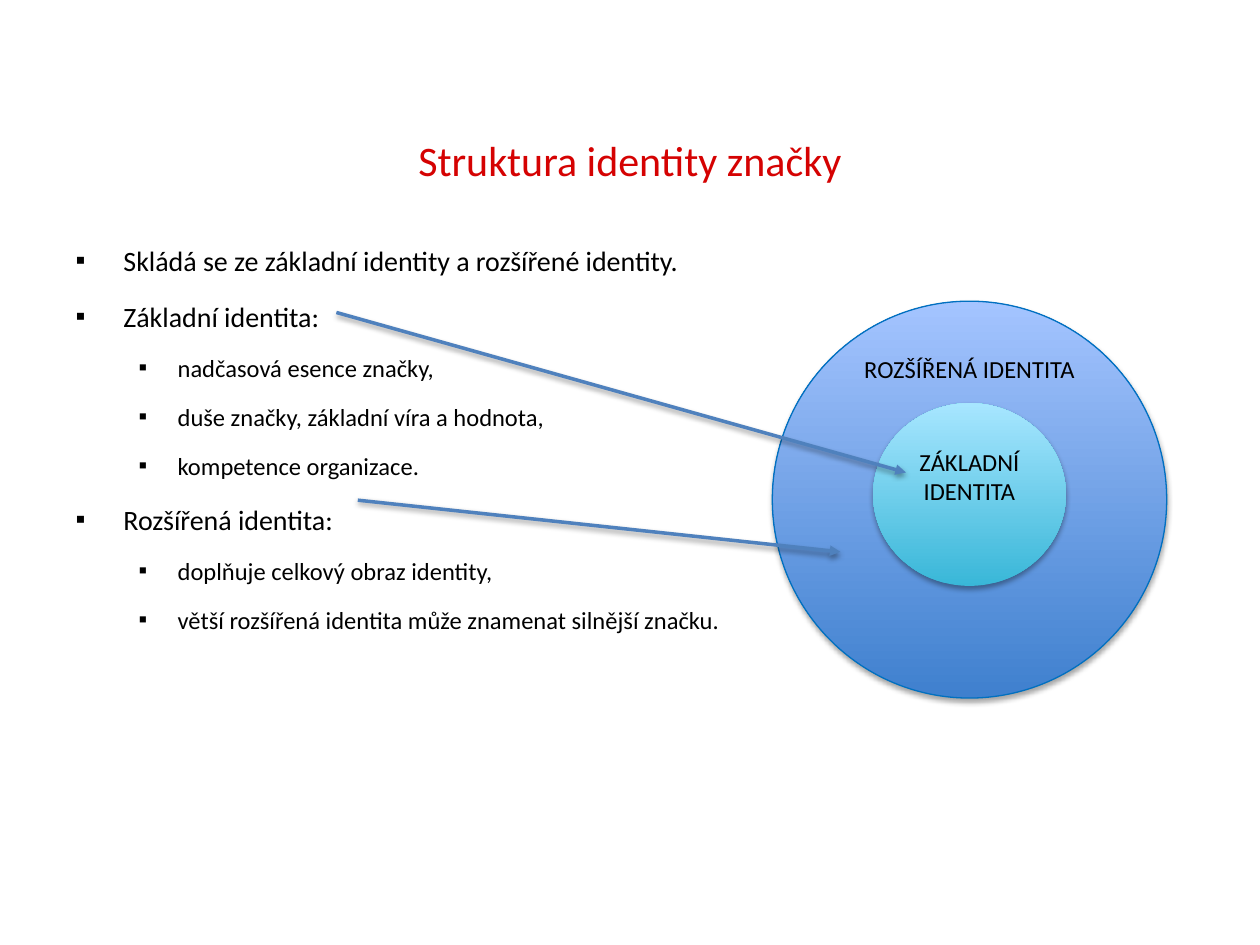
from lxml.etree import SubElement as Sub
from pptx import Presentation
from pptx.dml.color import RGBColor
from pptx.enum.shapes import MSO_CONNECTOR as Link, MSO_SHAPE as Form
from pptx.enum.text import MSO_ANCHOR as Anchor, PP_ALIGN as Align
from pptx.oxml.ns import qn
from pptx.util import Inches, Pt

RED = RGBColor(0xD5, 0x02, 0x02)
BLACK = RGBColor(0x00, 0x00, 0x00)
EDGE = RGBColor(0x00, 0x70, 0xC0)
STEEL = RGBColor(0x4F, 0x81, 0xBD)
BLUES = RGBColor(0x3F, 0x80, 0xCE), RGBColor(0xA4, 0xC4, 0xFF)
CYANS = RGBColor(0x39, 0xB7, 0xD8), RGBColor(0xA7, 0xE6, 0xFF)

LEVELS = [
    {"size": 16, "left": 0.38, "hang": 0.38},
    {"size": 14, "left": 0.81, "hang": 0.31},
]
POINTS = [
    (0, "Skládá se ze základní identity a rozšířené identity."),
    (0, "Základní identita:"),
    (1, "nadčasová esence značky,"),
    (1, "duše značky, základní víra a hodnota,"),
    (1, "kompetence organizace."),
    (0, "Rozšířená identita:"),
    (1, "doplňuje celkový obraz identity,"),
    (1, "větší rozšířená identita může znamenat silnější značku."),
]


def apply(item, **values):
    for name, value in values.items():
        setattr(item, name, value)


def place(shape, left, top, width, height):
    apply(shape, left=Inches(left), top=Inches(top),
          width=Inches(width), height=Inches(height))


def write(para, text, size, color=BLACK, align=Align.CENTER):
    para.alignment = align
    run = para.add_run()
    run.text = text
    apply(run.font, name="Calibri", size=Pt(size))
    run.font.color.rgb = color


def shade(shape, alpha, dist):
    props = shape._element.spPr
    list_ = props.find(qn("a:effectLst"))
    if list_ is None:
        list_ = Sub(props, qn("a:effectLst"))
    drop = Sub(list_, qn("a:outerShdw"), blurRad=str(Pt(3.1)), dist=str(Pt(dist)),
               dir="5400000", rotWithShape="0")
    tone = Sub(drop, qn("a:srgbClr"), val=str(BLACK))
    Sub(tone, qn("a:alpha"), val=str(alpha * 1000))


def add_title(slide):
    title = slide.shapes.title
    place(title, 0.5, 0.87, 9, 0.8)
    title.text_frame.vertical_anchor = Anchor.MIDDLE
    write(title.text_frame.paragraphs[0], "Struktura identity značky", 24, RED)


def add_list(slide):
    body = slide.placeholders[1]
    place(body, 0.5, 1.75, 9, 4.95)
    frame = body.text_frame
    for index, (level, text) in enumerate(POINTS):
        para = frame.add_paragraph() if index else frame.paragraphs[0]
        look = LEVELS[level]
        props = para._p.get_or_add_pPr()
        props.set("marL", str(Inches(look["left"])))
        props.set("indent", str(-Inches(look["hang"])))
        Sub(props, qn("a:buChar"), char="▪")
        apply(para, level=level, line_spacing=1.5)
        if index == 0:
            para.space_before = Pt(0)
        write(para, text, look["size"], align=Align.JUSTIFY)


def add_disc(slide, box, colors, text, edge=None, **frame):
    disc = slide.shapes.add_shape(Form.FLOWCHART_CONNECTOR, *map(Inches, box))
    disc.fill.gradient()
    disc.fill.gradient_angle = 90
    for stop, color in zip(disc.fill.gradient_stops, colors):
        stop.color.rgb = color
    if edge is None:
        disc.line.fill.background()
    else:
        disc.line.color.rgb = edge
        disc.line.width = Pt(0.75)
    disc.shadow.inherit = False
    shade(disc, 35, 1.8)
    apply(disc.text_frame, word_wrap=True, **frame)
    write(disc.text_frame.paragraphs[0], text, 14)


def add_arrow(slide, *ends):
    arrow = slide.shapes.add_connector(Link.STRAIGHT, *map(Inches, ends))
    arrow.line.color.rgb = STEEL
    arrow.line.width = Pt(2)
    Sub(arrow._element.spPr.find(qn("a:ln")), qn("a:tailEnd"), type="triangle")
    shade(arrow, 38, 1.6)


def main():
    deck = Presentation()
    apply(deck, slide_width=Inches(10), slide_height=Inches(7.5))
    slide = deck.slides.add_slide(deck.slide_layouts[1])
    add_title(slide)
    add_list(slide)
    add_disc(slide, (6.13, 2.39, 3.13, 3.15), BLUES, "ROZŠÍŘENÁ IDENTITA", EDGE,
             vertical_anchor=Anchor.TOP, margin_top=Inches(-0.04))
    add_disc(slide, (6.93, 3.2, 1.53, 1.45), CYANS, "ZÁKLADNÍ IDENTITA",
             vertical_anchor=Anchor.MIDDLE, margin_bottom=Inches(0.34))
    add_arrow(slide, 2.67, 2.48, 7.19, 3.75)
    add_arrow(slide, 2.84, 3.97, 6.67, 4.38)
    deck.save("out.pptx")


if __name__ == "__main__":
    main()
